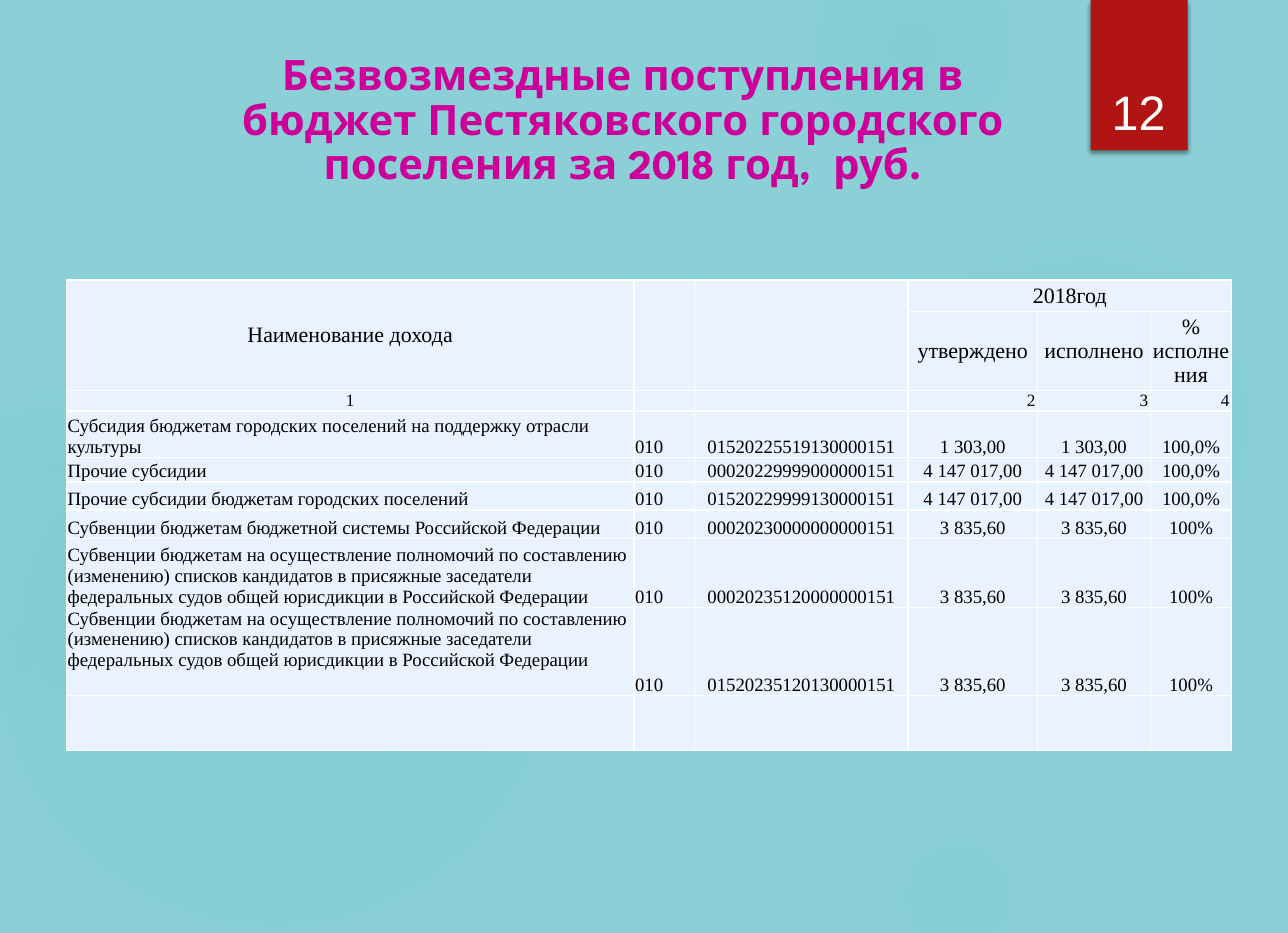
import pptx
import pptx.util
import pptx.dml.color
import pptx.enum.shapes
import pptx.enum.text
import pptx.oxml.ns
import lxml.etree

Pt = pptx.util.Pt
Rgb = pptx.dml.color.RGBColor.from_string
Form = pptx.enum.shapes.MSO_SHAPE
Align = pptx.enum.text.PP_ALIGN
Hold = pptx.enum.text.MSO_ANCHOR


class Theme:
    back, glow, flag = "8AD0D6", "50B9C1", "B01513"
    head, cell, ink, white = "CC0099", "E8F3FF", "000000", "FFFFFF"
    sans, show, serif = "Arial", "League Spartan", "Times New Roman"
    page, title, top, body, index, blank = 30.9, 26.7, 14, 12, 11, 6


def tag(root, name, **attrs):
    """Add one drawing element below root."""
    return lxml.etree.SubElement(root, pptx.oxml.ns.qn("a:" + name),
                                 {key: str(val) for key, val in attrs.items()})


def text(frame, words, font=Theme.serif, size=Theme.body, color=Theme.ink,
         bold=False, align=Align.CENTER, hold=Hold.MIDDLE, space=None):
    """Write one paragraph into a text frame."""
    frame.word_wrap = True
    frame.vertical_anchor = hold
    para = frame.paragraphs[0]
    para.alignment = align
    para.line_spacing = space
    if not words:
        tag(para._p, "endParaRPr", sz=Theme.blank * 100)
        return
    run = para.add_run()
    run.text = words
    run.font.name, run.font.size, run.font.bold = font, Pt(size), bold
    run.font.color.rgb = Rgb(color)


deck = pptx.Presentation()
deck.slide_width, deck.slide_height = Pt(822.24), Pt(595.44)
slide = deck.slides.add_slide(deck.slide_layouts[6])
slide.background.fill.solid()
slide.background.fill.fore_color.rgb = Rgb(Theme.back)

# Soft glows: left, top, width, height, then (stop, opacity) in percent
glows = [
    (566.6, 145.4, 253.4, 244.8, [(0, 7), (36, 6), (69, 0)]),
    (511.2, -39.6, 144, 139, [(0, 14), (36, 7), (73, 0)]),
    (566.6, 529.2, 89.3, 85.7, [(0, 9), (36, 5), (66, 0)]),
    (-13.7, 231.8, 376.6, 363.6, [(0, 11), (36, 10), (75, 0)]),
    (-75.6, 251.3, 212.4, 205.2, [(0, 8), (36, 8), (72, 0)]),
]
for *place, stops in glows:
    disc = slide.shapes.add_shape(Form.OVAL, *map(Pt, place))
    disc.shadow.inherit = False
    disc.line.fill.background()
    blend = lxml.etree.Element(pptx.oxml.ns.qn("a:gradFill"), rotWithShape="1")
    chain = tag(blend, "gsLst")
    for stop, force in stops:
        tint = tag(tag(chain, "gs", pos=stop * 1000), "srgbClr", val=Theme.glow)
        tag(tint, "alpha", val=force * 1000)
    tag(tag(blend, "path", path="circle"), "fillToRect",
        l=50000, t=50000, r=50000, b=50000)
    disc._element.spPr.find(pptx.oxml.ns.qn("a:prstGeom")).addnext(blend)

# Red flag with the page number
flag = slide.shapes.add_shape(Form.RECTANGLE, Pt(696.3), 0, Pt(61.9), Pt(95.8))
flag.fill.solid()
flag.fill.fore_color.rgb = Rgb(Theme.flag)
flag.line.fill.background()
flag.shadow.inherit = False
shade = tag(flag._element.spPr.find(pptx.oxml.ns.qn("a:effectLst")), "outerShdw",
            blurRad=Pt(3), dist=Pt(2), dir=90 * 60000, rotWithShape=0)
tag(tag(shade, "srgbClr", val=Theme.ink), "alpha", val=45000)
page = slide.shapes.add_textbox(Pt(698.4), Pt(25.9), Pt(56.9), Pt(67))
text(page.text_frame, "12", font=Theme.sans, size=Theme.page,
     color=Theme.white, hold=Hold.BOTTOM)

# Title
title = slide.shapes.add_textbox(Pt(127.4), Pt(26.6), Pt(540.7), Pt(102.2))
text(title.text_frame,
     "Безвозмездные поступления в бюджет Пестяковского городского поселения "
     "за 2018 год,  руб.",
     font=Theme.show, size=Theme.title, color=Theme.head, bold=True, space=0.89)

# Table content
jury = ("Субвенции бюджетам на осуществление полномочий по составлению "
        "(изменению) списков кандидатов в присяжные заседатели федеральных "
        "судов общей юрисдикции в Российской Федерации")
items = [
    ("Субсидия бюджетам городских поселений на поддержку отрасли культуры",
     "01520225519130000151", "1 303,00", "100,0%"),
    ("Прочие субсидии", "00020229999000000151", "4 147 017,00", "100,0%"),
    ("Прочие субсидии бюджетам городских поселений",
     "01520229999130000151", "4 147 017,00", "100,0%"),
    ("Субвенции бюджетам бюджетной системы Российской Федерации",
     "00020230000000000151", "3 835,60", "100%"),
    (jury, "00020235120000000151", "3 835,60", "100%"),
    (jury, "01520235120130000151", "3 835,60", "100%"),
]
rows = [
    ["Наименование дохода", "", "", "2018год", "", ""],
    ["", "", "", "утверждено", "исполнено", "% исполнения"],
    ["1", "", "", "2", "3", "4"],
    *[[name, "010", code, sum, sum, rate] for name, code, sum, rate in items],
    [""] * 6,
]
wide = [362.2, 38.9, 136.1, 82.8, 72, 51.8]
tall = [20.1, 49.1, 12.8, 28.7, 15.6, 17.9, 18.2, 42.8, 56.5, 35.1]

# Table grid
frame = slide.shapes.add_table(len(tall), len(wide), Pt(42.5), Pt(178.6),
                               Pt(sum(wide)), Pt(sum(tall)))
grid = frame.table
grid.first_row = grid.horz_banding = False
for col, width in zip(grid.columns, wide):
    col.width = Pt(width)
for row, height in zip(grid.rows, tall):
    row.height = Pt(height)
for x in range(3):
    grid.cell(0, x).merge(grid.cell(1, x))
grid.cell(0, 3).merge(grid.cell(0, 5))

# Cells: three heading rows, then the income rows
for y, row in enumerate(rows):
    for x, words in enumerate(row):
        cell = grid.cell(y, x)
        edge = 1.44 if y < 3 else 0.72
        cell.margin_left = cell.margin_right = Pt(edge)
        cell.margin_top, cell.margin_bottom = Pt(0 if y < 3 else 0.72), 0
        size, align, hold = Theme.top, Align.CENTER, Hold.MIDDLE
        if y == 2:
            size = Theme.index
            align = Align.RIGHT if x else Align.CENTER
        elif y > 2:
            size, hold = Theme.body, Hold.BOTTOM
            align = Align.LEFT if x < 2 else Align.CENTER
            if x == 0 and y == 8:
                hold = Hold.TOP
        text(cell.text_frame, words, size=size, align=align)
        cell.vertical_anchor = hold
        for side in ("lnL", "lnR", "lnT", "lnB"):
            line = tag(cell._tc.get_or_add_tcPr(), side, w=Pt(1))
            tag(tag(line, "solidFill"), "srgbClr", val=Theme.white)
        cell.fill.solid()
        cell.fill.fore_color.rgb = Rgb(Theme.cell)

deck.save("out.pptx")
